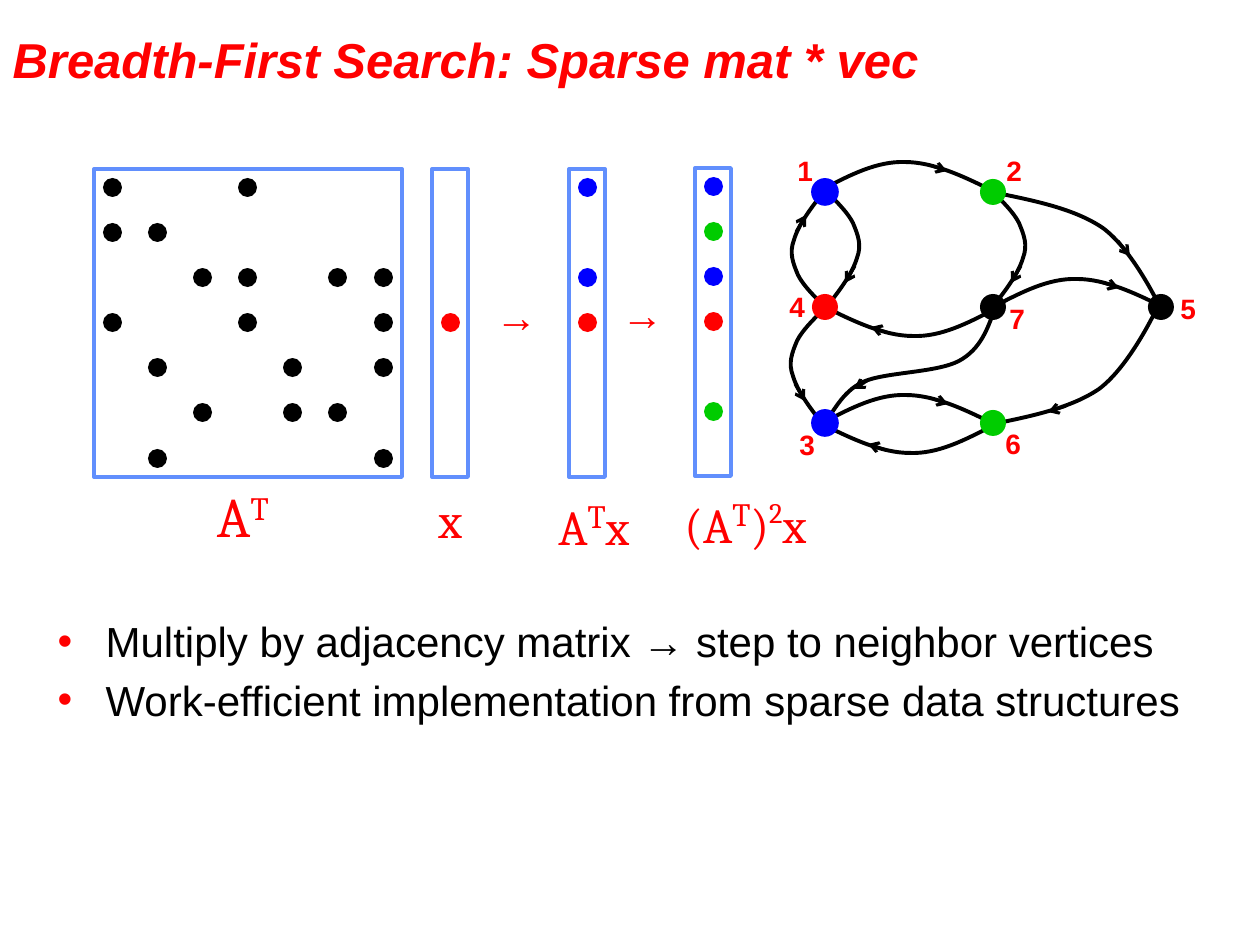
from lxml import etree
from pptx import Presentation
from pptx.dml.color import RGBColor
from pptx.enum.shapes import MSO_CONNECTOR, MSO_SHAPE
from pptx.enum.text import MSO_ANCHOR, MSO_AUTO_SIZE, PP_ALIGN
from pptx.oxml.ns import qn
from pptx.util import Pt

STRAIGHT = MSO_CONNECTOR.STRAIGHT
RECTANGLE, OVAL = MSO_SHAPE.RECTANGLE, MSO_SHAPE.OVAL
MIDDLE = MSO_ANCHOR.MIDDLE
NO_FIT, GROW = MSO_AUTO_SIZE.NONE, MSO_AUTO_SIZE.SHAPE_TO_FIT_TEXT
LEFT, RIGHT = PP_ALIGN.LEFT, PP_ALIGN.RIGHT

SCALE = 914400 / 126
RED, BLUE, GREEN, BLACK, FRAME = "FF0000", "0000FF", "00CC00", "000000", "618FFD"
DOT_COLORS = {"K": BLACK, "R": RED, "B": BLUE, "G": GREEN}

MATRIX = ["K..K...", "KK.....", "..KK.KK", "K..K..K", ".K..K.K", "..K.KK.", ".K....K"]
GRIDS = [
    ((94, 169, 308, 308), MATRIX),
    ((432, 169, 36, 308), "...R..."),
    ((569, 169, 36, 308), "B.BR..."),
    ((695, 168, 36, 308), "BGBR.G."),
]
LABELS = [
    ((193, 475, 88, 79), RIGHT, "Cambria", [("A", 32, 0), ("T", 32, 30)]),
    ((426, 483, 50, 72), LEFT, "Cambria", [("x", 28, 0)]),
    ((546, 483, 108, 72), LEFT, "Cambria", [("A", 28, 0), ("T", 32, 30), ("x", 28, 0)]),
    ((672, 481, 158, 72), LEFT, "Cambria",
     [("(A", 28, 0), ("T", 32, 30), (")", 28, 0), ("2", 28, 40), ("x", 28, 0)]),
    ((483, 284, 67, 63), LEFT, "Arial", [("→", 24, 0)]),
    ((609, 282, 67, 63), LEFT, "Arial", [("→", 24, 0)]),
]

NODES = {
    "1": (0, 0, BLUE, (-40, -45)), "2": (1, 0, GREEN, (1, -45)),
    "3": (0, 2, BLUE, (-38, -2)), "4": (0, 1, RED, (-48, -24)),
    "5": (2, 1, BLACK, (7, -22)), "6": (1, 2, GREEN, (0, -3)),
    "7": (1, 1, BLACK, (4, -12)),
}
ARC = [(0, 0), (27, -14), (54, -28), (82, -27), (110, -27), (140, -13), (170, 2)]
BOW = [(0, 0), (10, 10), (20, 20), (25, 30), (30, 42), (34, 52), (29, 65),
       (25, 79), (13, 96), (0, 112)]
SWEEP = [(0, 0), (-8, 17), (-32, 63), (-59, 83), (-87, 102), (-126, 110), (-165, 118)]
TWIST = [(0, 0), (7, -5), (16, -29), (38, -39), (60, -49), (111, -48), (134, -60),
         (156, -72), (163, -93), (170, -113)]
ARC_HEAD = [(106, -24), (124, -18)]
BOW_HEAD = [(27, 73), (17, 90)]
EDGES = [
    ("1", (-2, -3), (1, 1), ARC, ARC_HEAD),
    ("7", (2, -1), (1, 1), ARC, ARC_HEAD),
    ("3", (-1, -1), (1, 1), ARC, ARC_HEAD),
    ("6", (-1, 3), (-1, -1), ARC, ARC_HEAD),
    ("7", (2, 2), (-1, -1), ARC, ARC_HEAD),
    ("1", (3, 1), (1, 1), BOW, BOW_HEAD),
    ("2", (1, 1), (1, 1), BOW, BOW_HEAD),
    ("4", (-2, -2), (-1, -1), BOW, BOW_HEAD),
    ("4", (-3, 4), (-1, 1), BOW, BOW_HEAD),
    ("5", (-3, -1), (1, 1), SWEEP, [(-92, 100), (-110, 106)]),
    ("5", (1, 4), (1, -1), SWEEP, [(-44, 70), (-32, 55)]),
    ("3", (0, -2), (1, 1), TWIST, [(45, -42), (29, -32)]),
]


def emu(*lengths):
    """Turn pixel lengths into EMU."""
    return [round(length * SCALE) for length in lengths]


def color(value):
    """Turn a hex string into a colour."""
    return RGBColor.from_string(value)


def add_run(paragraph, text, size, font_name, hex_color, bold=False, baseline=0):
    """Append one formatted run and return it."""
    run = paragraph.add_run()
    run.text = text
    run.font.size, run.font.name, run.font.bold = Pt(size), font_name, bold
    run.font.color.rgb = color(hex_color)
    if baseline:
        run._r.get_or_add_rPr().set("baseline", str(baseline * 1000))
    return run


def add_label(slide, box, align, font_name, parts, bold=False):
    """Add an unwrapped red label made of (text, size, baseline) parts."""
    frame = slide.shapes.add_textbox(*emu(*box)).text_frame
    frame.word_wrap, frame.auto_size = False, GROW
    paragraph = frame.paragraphs[0]
    paragraph.alignment = align
    for text, size, baseline in parts:
        add_run(paragraph, text, size, font_name, RED, bold, baseline)


def add_dot(slide, left, top, size, fill):
    """Add a filled circle."""
    shape = slide.shapes.add_shape(OVAL, *emu(left, top, size, size))
    shape.shadow.inherit = False
    shape.fill.solid()
    shape.fill.fore_color.rgb = color(fill)
    shape.line.fill.background()
    return shape


def add_grid(slide, box, rows):
    """Add a framed matrix or vector with its dots."""
    left, top = box[:2]
    frame = slide.shapes.add_shape(RECTANGLE, *emu(*box))
    frame.shadow.inherit = False
    frame.fill.background()
    frame.line.color.rgb, frame.line.width = color(FRAME), Pt(2.25)
    for row, cells in enumerate(rows):
        for column, cell in enumerate(cells):
            if cell in DOT_COLORS:
                add_dot(slide, left + 9 + column * 271 // 6, top + 9 + row * 271 // 6,
                        19, DOT_COLORS[cell])


def add_curve(slide, points):
    """Add an open outline of cubic segments through three points each."""
    builder = slide.shapes.build_freeform(*points[0], scale=SCALE)
    builder.add_line_segments(points[1:], close=False)
    shape = builder.convert_to_shape()
    shape.shadow.inherit = False
    shape.fill.background()
    shape.line.color.rgb, shape.line.width = color(BLACK), Pt(2.25)
    outline = next(shape._element.iter(qn("a:path")))
    segments = outline.findall(qn("a:lnTo"))
    for index in range(0, len(segments), 3):
        cubic = etree.SubElement(outline, qn("a:cubicBezTo"))
        for segment in segments[index:index + 3]:
            cubic.append(segment[0])
            outline.remove(segment)


def add_arrow(slide, start, end):
    """Add a short line with an open arrowhead."""
    arrow = slide.shapes.add_connector(STRAIGHT, *emu(*start, *end))
    arrow.line.color.rgb, arrow.line.width = color(BLACK), Pt(1.75)
    etree.SubElement(arrow.line._get_or_add_ln(), qn("a:tailEnd"), type="arrow")
    etree.SubElement(arrow._element.spPr, qn("a:effectLst"))


def add_graph(slide, box):
    """Add the directed graph with node centres spread over the box."""
    left, top, width, height = box
    centers = {name: (left + width * column // 2, top + height * row // 2)
               for name, (column, row, _, _) in NODES.items()}
    for name, shift, flip, curve, head in EDGES:
        x, y = (center + offset for center, offset in zip(centers[name], shift))
        curve, head = ([(x + flip[0] * dx, y + flip[1] * dy) for dx, dy in points]
                       for points in (curve, head))
        add_curve(slide, curve)
        add_arrow(slide, *head)
    for name, (_, _, fill, (dx, dy)) in NODES.items():
        x, y = centers[name]
        node = add_dot(slide, x - 13, y - 13, 26, fill)
        if fill == BLUE:
            node.line.color.rgb, node.line.width = color(BLUE), Pt(1)
        add_label(slide, (x + dx, y + dy, 40, 47), LEFT, "Arial", [(name, 16, 0)], True)


def place(shape, box):
    """Move a placeholder into the box and return its text frame."""
    shape.left, shape.top, shape.width, shape.height = emu(*box)
    shape.text_frame.auto_size = NO_FIT
    return shape.text_frame


def fill_title(slide, box, text):
    """Write the slide title."""
    frame = place(slide.shapes.title, box)
    frame.vertical_anchor = MIDDLE
    paragraph = frame.paragraphs[0]
    paragraph.alignment = LEFT
    add_run(paragraph, text, 28, "Arial", RED, True).font.italic = True


def fill_bullets(slide, box, lines):
    """Write the bulleted list with red bullets."""
    frame = place(slide.placeholders[1], box)
    indent = emu(48)[0]
    for index, text in enumerate(lines):
        paragraph = frame.add_paragraph() if index else frame.paragraphs[0]
        properties = paragraph._p.get_or_add_pPr()
        properties.set("marL", str(indent))
        properties.set("indent", str(-indent))
        bullet_color = etree.SubElement(properties, qn("a:buClr"))
        etree.SubElement(bullet_color, qn("a:srgbClr"), val=RED)
        etree.SubElement(properties, qn("a:buFont"), typeface="Arial")
        etree.SubElement(properties, qn("a:buChar"), char="•")
        add_run(paragraph, text, 24, "Arial", BLACK)


def main():
    """Build and save the slide."""
    presentation = Presentation()
    presentation.slide_width, presentation.slide_height = emu(1260, 945)
    slide = presentation.slides.add_slide(presentation.slide_layouts[1])
    fill_title(slide, (0, 10, 1197, 98), "Breadth-First Search: Sparse mat * vec")
    for box, rows in GRIDS:
        add_grid(slide, box, rows)
    for label in LABELS:
        add_label(slide, *label)
    add_graph(slide, (825, 192, 336, 231))
    fill_bullets(slide, (45, 609, 1215, 184), [
        "Multiply by adjacency matrix → step to neighbor vertices",
        "Work-efficient implementation from sparse data structures",
    ])
    presentation.save("out.pptx")


if __name__ == "__main__":
    main()
